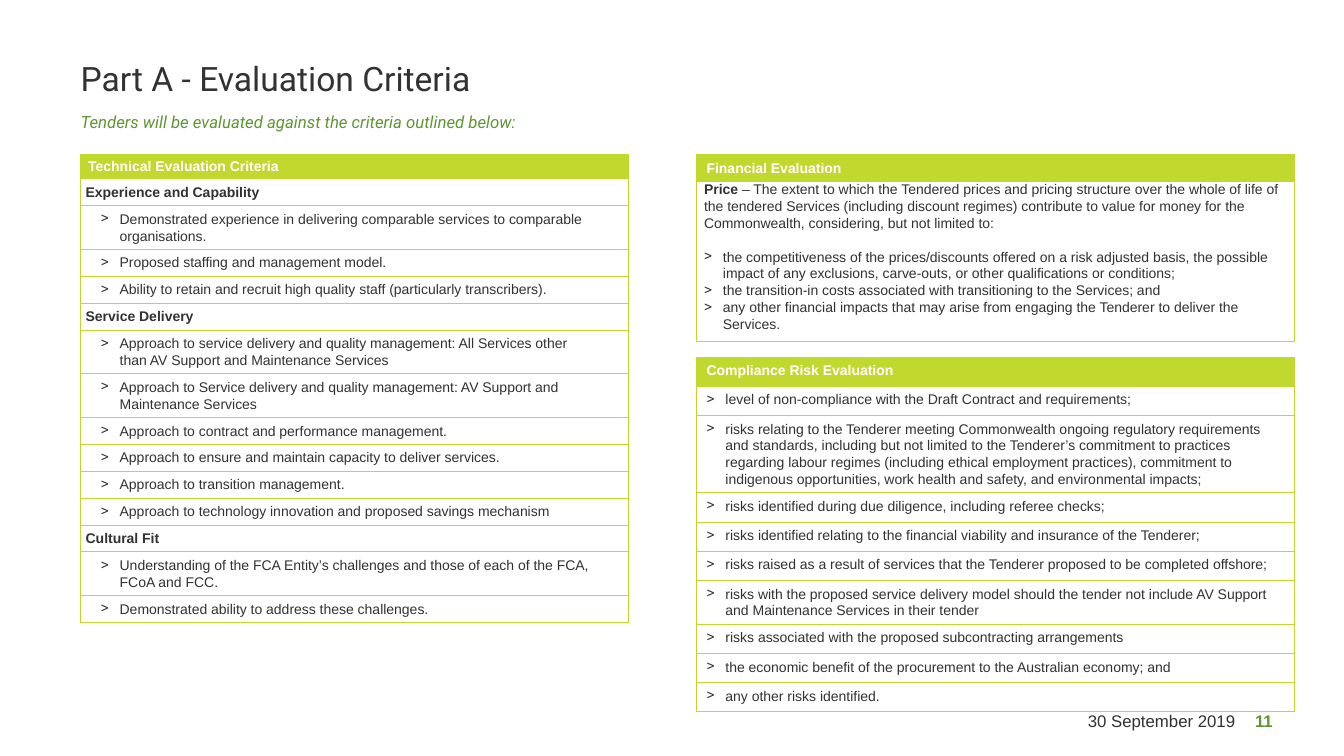
from pptx import Presentation
from pptx.dml.color import RGBColor
from pptx.enum.text import MSO_ANCHOR, MSO_AUTO_SIZE, PP_ALIGN
from pptx.oxml import parse_xml
from pptx.oxml.ns import nsdecls
from pptx.util import Pt

INK, GREEN, LIME, WHITE = "333132", "5E9732", "C1D82F", "FFFFFF"
LINE = 12
INDENT = 13.5

TECHNICAL = {
    "Experience and Capability": [
        "Demonstrated experience in delivering comparable services to comparable organisations.",
        "Proposed staffing and management model.",
        "Ability to retain and recruit high quality staff (particularly transcribers).",
    ],
    "Service Delivery": [
        "Approach to service delivery and quality management: All Services other than AV Support and Maintenance Services",
        "Approach to Service delivery and quality management: AV Support and Maintenance Services",
        "Approach to contract and performance management.",
        "Approach to ensure and maintain capacity to deliver services.",
        "Approach to transition management.",
        "Approach to technology innovation and proposed savings mechanism",
    ],
    "Cultural Fit": [
        "Understanding of the FCA Entity’s challenges and those of each of the FCA, FCoA and FCC.",
        "Demonstrated ability to address these challenges.",
    ],
}
PRICE = (" – The extent to which the Tendered prices and pricing structure over the whole of life of "
         "the tendered Services (including discount regimes) contribute to value for money for the "
         "Commonwealth, considering, but not limited to:")
PRICE_FACTORS = [
    "the competitiveness of the prices/discounts offered on a risk adjusted basis, the possible "
    "impact of any exclusions, carve-outs, or other qualifications or conditions;",
    "the transition-in costs associated with transitioning to the Services; and",
    "any other financial impacts that may arise from engaging the Tenderer to deliver the Services.",
]
RISKS = [
    "level of non-compliance with the Draft Contract and requirements;",
    "risks relating to the Tenderer meeting Commonwealth ongoing regulatory requirements and "
    "standards, including but not limited to the Tenderer’s commitment to practices regarding "
    "labour regimes (including ethical employment practices), commitment to indigenous "
    "opportunities, work health and safety, and environmental impacts;",
    "risks identified during due diligence, including referee checks;",
    "risks identified relating to the financial viability and insurance of the Tenderer;",
    "risks raised as a result of services that the Tenderer proposed to be completed offshore;",
    "risks with the proposed service delivery model should the tender not include AV Support "
    "and Maintenance Services in their tender",
    "risks associated with the proposed subcontracting arrangements",
    "the economic benefit of the procurement to the Australian economy; and",
    "any other risks identified.",
]


def rgb(value):
    """Turn a hex string into a colour."""
    return RGBColor.from_string(value)


def write(paragraph, text, size=10, color=INK, font="Arial", bold=False, italic=False,
          align=PP_ALIGN.LEFT, spacing=Pt(LINE), bullet=False):
    """Add a formatted run of text to a paragraph."""
    properties = paragraph._p.get_or_add_pPr()
    if bullet:
        properties.set("marL", str(Pt(INDENT)))
        properties.set("indent", str(Pt(-INDENT)))
        properties.append(parse_xml(f'<a:buChar {nsdecls("a")} char="&gt;"/>'))
    paragraph.alignment = align
    paragraph.line_spacing = spacing
    paragraph.space_before = Pt(0)
    run = paragraph.add_run()
    run.text = text
    run.font.size, run.font.name = Pt(size), font
    run.font.bold, run.font.italic = bold, italic
    run.font.color.rgb = rgb(color)


def place_text(shape, box, text, anchor=MSO_ANCHOR.TOP, **style):
    """Move a text shape to its box and fill it with one line."""
    shape.left, shape.top, shape.width, shape.height = map(Pt, box)
    frame = shape.text_frame
    frame.word_wrap = True
    frame.auto_size = MSO_AUTO_SIZE.NONE
    frame.vertical_anchor = anchor
    frame.margin_left = frame.margin_right = frame.margin_top = frame.margin_bottom = 0
    write(frame.paragraphs[0], text, **style)


def style_cell(cell, sides, fill=None, margins=(7.2, 3.6), anchor=MSO_ANCHOR.TOP):
    """Set the borders, fill, margins and anchor of a cell."""
    properties = cell._tc.get_or_add_tcPr()
    for side in "LRTB":
        paint = f'<a:solidFill><a:srgbClr val="{LIME}"/></a:solidFill>' if side in sides else "<a:noFill/>"
        properties.append(parse_xml(f'<a:ln{side} {nsdecls("a")} w="{Pt(0.5)}">{paint}</a:ln{side}>'))
    if fill:
        cell.fill.solid()
        cell.fill.fore_color.rgb = rgb(fill)
    else:
        cell.fill.background()
    left, vertical = margins
    cell.margin_left, cell.margin_right = Pt(left), Pt(min(left, 7.2))
    cell.margin_top = cell.margin_bottom = Pt(vertical)
    cell.vertical_anchor = anchor


def row_height(text, line_length, minimum):
    """Give the height of a row from the length of its text."""
    return max(minimum, LINE * (1 + len(text) // line_length) + 7.2)


def add_grid(slide, box, columns, heights):
    """Add an unbanded table with the given columns and rows."""
    left, top, width = box
    frame = slide.shapes.add_table(len(heights), len(columns), Pt(left), Pt(top), Pt(width), Pt(sum(heights)))
    table = frame.table
    table.horz_banding = False
    for column, column_width in zip(table.columns, columns):
        column.width = Pt(column_width)
    for row, height in zip(table.rows, heights):
        row.height = Pt(height)
    return table


def add_header(cell, text, **style):
    """Fill a lime header cell."""
    style_cell(cell, "LRTB", LIME, **style)
    write(cell.text_frame.paragraphs[0], text, color=WHITE, bold=True)


def add_technical(slide, box):
    """Build the technical criteria table."""
    rows = []
    for group, items in TECHNICAL.items():
        rows += [(group, False)] + [(item, True) for item in items]
    gutter = 18
    heights = [17.3] + [row_height(text, 80, 19.2) for text, _ in rows]
    table = add_grid(slide, box, [box[2] - gutter, gutter], heights)
    table.cell(0, 0).merge(table.cell(0, 1))
    middle = MSO_ANCHOR.MIDDLE
    add_header(table.cell(0, 0), "Technical Evaluation Criteria", margins=(5.4, 0), anchor=middle)
    for index, (text, is_item) in enumerate(rows, 1):
        cell, spare = table.cell(index, 0), table.cell(index, 1)
        style_cell(cell, "LTB", margins=(14.4 if is_item else 3.6, 3.6), anchor=middle)
        write(cell.text_frame.paragraphs[0], text, bold=not is_item, bullet=is_item)
        style_cell(spare, "RTB", margins=(0, 0))
        spare.text_frame.paragraphs[0]._p.get_or_add_endParaRPr().set("sz", "1000")


def add_financial(slide, box):
    """Build the financial evaluation table."""
    table = add_grid(slide, box, [box[2]], [19.2, 114.5])
    add_header(table.cell(0, 0), "Financial Evaluation")
    cell = table.cell(1, 0)
    style_cell(cell, "LRTB", margins=(5.4, 0))
    introduction = cell.text_frame.paragraphs[0]
    write(introduction, "Price", bold=True)
    write(introduction, PRICE)
    introduction.space_after = Pt(12)
    for factor in PRICE_FACTORS:
        write(cell.text_frame.add_paragraph(), factor, bullet=True)


def add_compliance(slide, box):
    """Build the compliance risk table."""
    heights = [20.9] + [row_height(risk, 90, 20.9) for risk in RISKS]
    table = add_grid(slide, box, [box[2]], heights)
    add_header(table.cell(0, 0), "Compliance Risk Evaluation")
    for index, risk in enumerate(RISKS, 1):
        cell = table.cell(index, 0)
        style_cell(cell, "LRTB")
        write(cell.text_frame.paragraphs[0], risk, bullet=True)


def add_heading(slide, box):
    """Fill the title and the subtitle below it."""
    left, top, width, height = box
    place_text(slide.shapes.title, box, "Part A - Evaluation Criteria", MSO_ANCHOR.BOTTOM,
               size=24, font="Roboto", spacing=0.9)
    body = slide.placeholders[1]
    place_text(body, (left, top + 50.4, width, height),
               "Tenders will be evaluated against the criteria outlined below:",
               size=12, color=GREEN, font="Roboto", italic=True, spacing=1.0)
    properties = body.text_frame.paragraphs[0]._p.get_or_add_pPr()
    properties.set("marL", "0")
    properties.set("indent", "0")
    properties.append(parse_xml(f'<a:buNone {nsdecls("a")}/>'))


def add_footer(slide, box):
    """Add the date and the page number."""
    left, top, width, height = box
    date = slide.shapes.add_textbox(0, 0, 0, 0)
    place_text(date, (left, top, 210, height), "30 September 2019", MSO_ANCHOR.MIDDLE,
               size=12, align=PP_ALIGN.RIGHT, spacing=1.0)
    number = slide.shapes.add_textbox(0, 0, 0, 0)
    place_text(number, (left + 224, top, width - 224, height), "11", MSO_ANCHOR.MIDDLE,
               size=12, color=GREEN, bold=True, spacing=1.0)


def main():
    """Build and save the slide."""
    presentation = Presentation()
    presentation.slide_width, presentation.slide_height = Pt(960), Pt(540)
    slide = presentation.slides.add_slide(presentation.slide_layouts[1])
    add_heading(slide, (57.6, 29.5, 688, 41))
    add_technical(slide, (57.6, 110.2, 391))
    add_financial(slide, (497.5, 110.2, 427))
    add_compliance(slide, (497.5, 254.9, 427))
    add_footer(slide, (672.5, 500.4, 261.5, 28.8))
    presentation.save("out.pptx")


if __name__ == "__main__":
    main()
